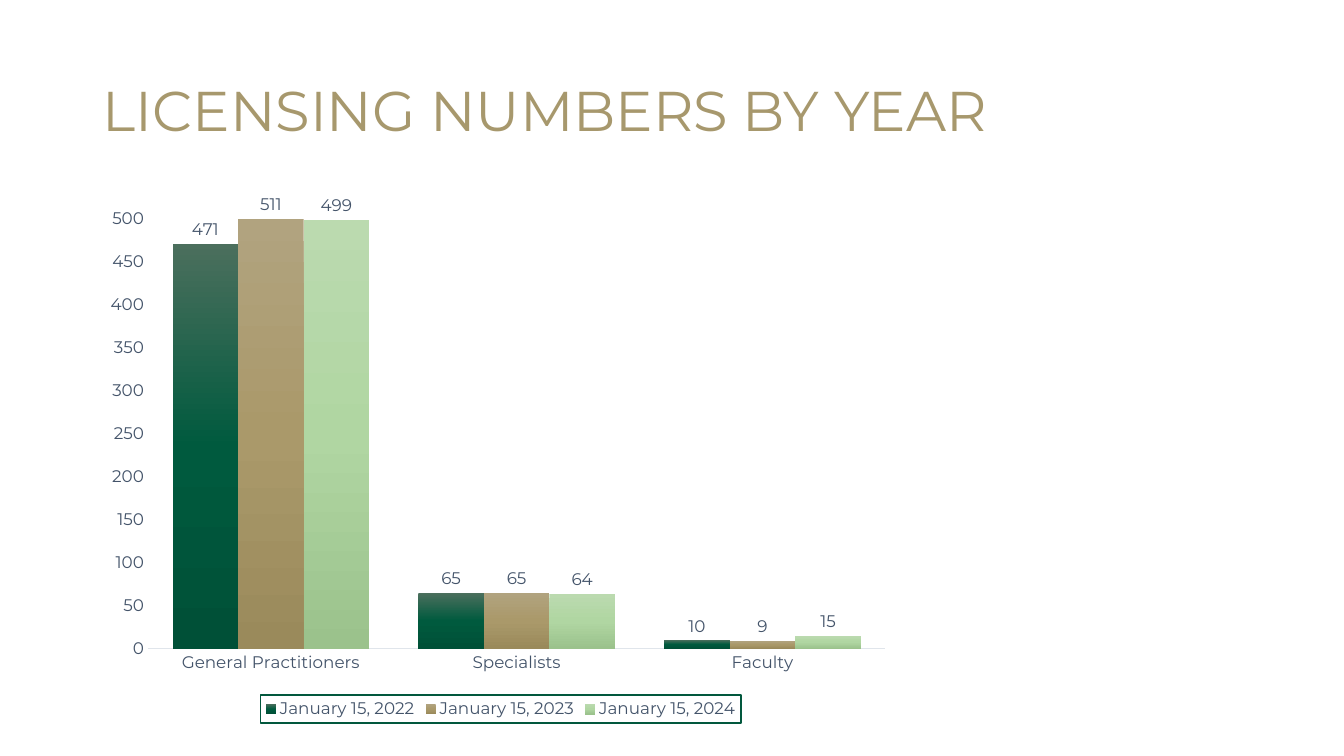
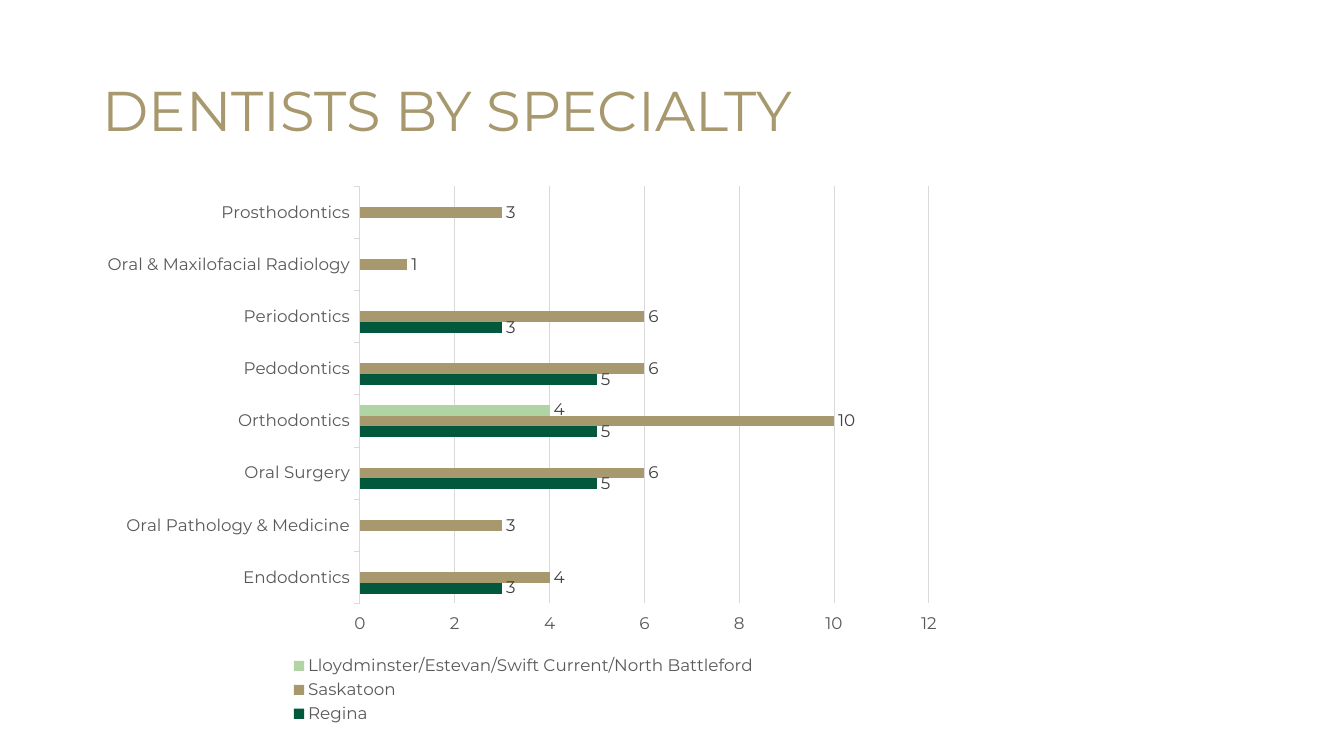
from dataclasses import dataclass

from pptx import Presentation
from pptx import util as u
from pptx.chart.data import CategoryChartData
from pptx.dml.color import RGBColor
from pptx.enum import chart as ch
from pptx.enum import text
from pptx.oxml import parse_xml
from pptx.oxml.ns import nsdecls, qn

# Shared style
FONT = "Montserrat"
GOLD = RGBColor(0xA7, 0x98, 0x6D)
GREEN = RGBColor(0x02, 0x58, 0x3D)
LIGHT_GREEN = RGBColor(0xB1, 0xD4, 0xA4)
SLATE = RGBColor(0x44, 0x54, 0x6A)
PALE_SLATE = RGBColor(0xE0, 0xE5, 0xEB)
GRAY = RGBColor(0x59, 0x59, 0x59)
DARK_GRAY = RGBColor(0x40, 0x40, 0x40)
PALE_GRAY = RGBColor(0xD9, 0xD9, 0xD9)

# Vertical gradients, top to bottom
GREEN_FADE = [RGBColor(0x4B, 0x6F, 0x5D), RGBColor(0x00, 0x5A, 0x3E), RGBColor(0x00, 0x50, 0x37)]
GOLD_FADE = [RGBColor(0xB1, 0xA3, 0x7F), RGBColor(0xAA, 0x99, 0x6A), RGBColor(0x9A, 0x8A, 0x5B)]
LIGHT_FADE = [RGBColor(0xBB, 0xDA, 0xAF), RGBColor(0xB0, 0xD6, 0xA2), RGBColor(0x9B, 0xC2, 0x8C)]

# The slide as a grid of 100 columns and 100 rows
SLIDE_WIDTH, SLIDE_HEIGHT = u.Inches(13.33), u.Inches(7.5)
TITLE_BOX = (6.9, 5.33, 86.25, 19.33)
LICENSING_BOX = (7.43, 25.47, 59.64, 70.27)
SPECIALTY_BOX = (6.9, 23.2, 64.14, 73.07)


@dataclass
class ChartStyle:
    kind: int
    text_color: RGBColor
    label_color: RGBColor
    axis_color: RGBColor
    gap: int
    maximum: int
    step: int
    ticks: int
    grid: bool
    plot_box: tuple  # shares of the chart: left, top, width, height


def place(box):
    """Turn columns and rows into slide lengths."""
    left, top, width, height = box
    return (int(SLIDE_WIDTH * left / 100), int(SLIDE_HEIGHT * top / 100),
            int(SLIDE_WIDTH * width / 100), int(SLIDE_HEIGHT * height / 100))


def style_font(font, size, color):
    font.name = FONT
    font.size = u.Pt(size)
    font.color.rgb = color


def add_title(slide, wording, box):
    frame = slide.shapes.add_textbox(*place(box)).text_frame
    frame.word_wrap = True
    frame.vertical_anchor = text.MSO_ANCHOR.MIDDLE
    paragraph = frame.paragraphs[0]
    paragraph.line_spacing = 0.9
    run = paragraph.add_run()
    run.text = wording
    style_font(run.font, 40, GOLD)


def fill_series(series, paint):
    """Fill with one colour, or with a list of evenly spaced gradient stops."""
    if isinstance(paint, RGBColor):
        series.format.fill.solid()
        series.format.fill.fore_color.rgb = paint
        return
    stops = "".join(
        f'<a:gs pos="{index * 100000 // (len(paint) - 1)}"><a:srgbClr val="{color}"/></a:gs>'
        for index, color in enumerate(paint))
    gradient = parse_xml(f'<a:gradFill {nsdecls("a")} rotWithShape="1"><a:gsLst>{stops}</a:gsLst>'
                         '<a:lin ang="5400000" scaled="0"/></a:gradFill>')
    series.format.fill.background()
    no_fill = series._element.find(qn("c:spPr")).find(qn("a:noFill"))
    no_fill.getparent().replace(no_fill, gradient)


def set_plot_box(chart, plot_box):
    plot_area = chart._chartSpace.chart.plotArea
    for layout in plot_area.findall(qn("c:layout")):
        plot_area.remove(layout)
    sizes = "".join(f'<c:{name} val="{share}"/>' for name, share in zip("xywh", plot_box))
    plot_area.insert(0, parse_xml(
        f'<c:layout {nsdecls("c")}><c:manualLayout><c:layoutTarget val="inner"/>'
        f'<c:xMode val="edge"/><c:yMode val="edge"/>{sizes}</c:manualLayout></c:layout>'))


def frame_legend(legend, color):
    border = parse_xml(f'<c:spPr {nsdecls("c", "a")}><a:ln w="12700"><a:solidFill>'
                       f'<a:srgbClr val="{color}"/></a:solidFill></a:ln></c:spPr>')
    legend._element.find(qn("c:txPr")).addprevious(border)


def style_axes(chart, style):
    category_axis, value_axis = chart.category_axis, chart.value_axis
    for axis in (category_axis, value_axis):
        axis.major_tick_mark = style.ticks
        axis.minor_tick_mark = ch.XL_TICK_MARK.NONE
        axis.has_major_gridlines = False
        style_font(axis.tick_labels.font, 12, style.text_color)
    category_axis.format.line.color.rgb = style.axis_color
    category_axis.format.line.width = u.Pt(0.75)
    value_axis.format.line.fill.background()
    value_axis.minimum_scale = 0
    value_axis.maximum_scale = style.maximum
    value_axis.major_unit = style.step
    if style.grid:
        value_axis.has_major_gridlines = True
        grid_line = value_axis.major_gridlines.format.line
        grid_line.color.rgb = style.axis_color
        grid_line.width = u.Pt(0.75)


def add_bars(slide, box, categories, rows, style):
    """Add a clustered chart; each row is a name, a paint and its values."""
    data = CategoryChartData()
    data.categories = categories
    for name, _, values in rows:
        data.add_series(name, values)
    chart = slide.shapes.add_chart(style.kind, *place(box), data).chart
    chart.has_title = False
    chart.font.name = FONT
    chart.font.size = u.Pt(10)
    style_axes(chart, style)

    # Bars and their values
    plot = chart.plots[0]
    plot.vary_by_categories = False
    plot.gap_width = style.gap
    plot.overlap = 0
    for series, (_, paint, _) in zip(plot.series, rows):
        series.invert_if_negative = False
        fill_series(series, paint)
        labels = series.data_labels
        labels.show_value = True
        labels.position = ch.XL_LABEL_POSITION.OUTSIDE_END
        style_font(labels.font, 12, style.label_color)

    # Legend
    chart.has_legend = True
    chart.legend.position = ch.XL_LEGEND_POSITION.BOTTOM
    chart.legend.include_in_layout = False
    style_font(chart.legend.font, 12, style.text_color)
    set_plot_box(chart, style.plot_box)
    return chart


def build_licensing(slide):
    add_title(slide, "LICENSING NUMBERS BY YEAR", TITLE_BOX)
    style = ChartStyle(
        kind=ch.XL_CHART_TYPE.COLUMN_CLUSTERED, text_color=SLATE, label_color=SLATE,
        axis_color=PALE_SLATE, gap=75, maximum=500, step=50,
        ticks=ch.XL_TICK_MARK.NONE, grid=False, plot_box=(0.06, 0.05, 0.92, 0.81))
    rows = [
        ("January 15, 2022", GREEN_FADE, (471, 65, 10)),
        ("January 15, 2023", GOLD_FADE, (511, 65, 9)),
        ("January 15, 2024", LIGHT_FADE, (499, 64, 15)),
    ]
    categories = ["General Practitioners", "Specialists", "Faculty"]
    chart = add_bars(slide, LICENSING_BOX, categories, rows, style)
    frame_legend(chart.legend, GREEN)


def build_specialty(slide):
    add_title(slide, "DENTISTS BY SPECIALTY", TITLE_BOX)
    style = ChartStyle(
        kind=ch.XL_CHART_TYPE.BAR_CLUSTERED, text_color=GRAY, label_color=DARK_GRAY,
        axis_color=PALE_GRAY, gap=182, maximum=12, step=2,
        ticks=ch.XL_TICK_MARK.OUTSIDE, grid=True, plot_box=(0.31, 0.02, 0.66, 0.755))
    categories = [
        "Endodontics", "Oral Pathology & Medicine", "Oral Surgery", "Orthodontics",
        "Pedodontics", "Periodontics", "Oral & Maxilofacial Radiology", "Prosthodontics",
    ]
    rows = [
        ("Regina", GREEN, (3, None, 5, 5, 5, 3, None, None)),
        ("Saskatoon", GOLD, (4, 3, 6, 10, 6, 6, 1, 3)),
        ("Lloydminster/Estevan/Swift Current/North Battleford", LIGHT_GREEN,
         (None, None, None, 4, None, None, None, None)),
    ]
    add_bars(slide, SPECIALTY_BOX, categories, rows, style)


def main():
    presentation = Presentation()
    presentation.slide_width, presentation.slide_height = SLIDE_WIDTH, SLIDE_HEIGHT
    blank = presentation.slide_layouts[6]
    for build in (build_licensing, build_specialty):
        build(presentation.slides.add_slide(blank))
    presentation.save("out.pptx")


if __name__ == "__main__":
    main()
